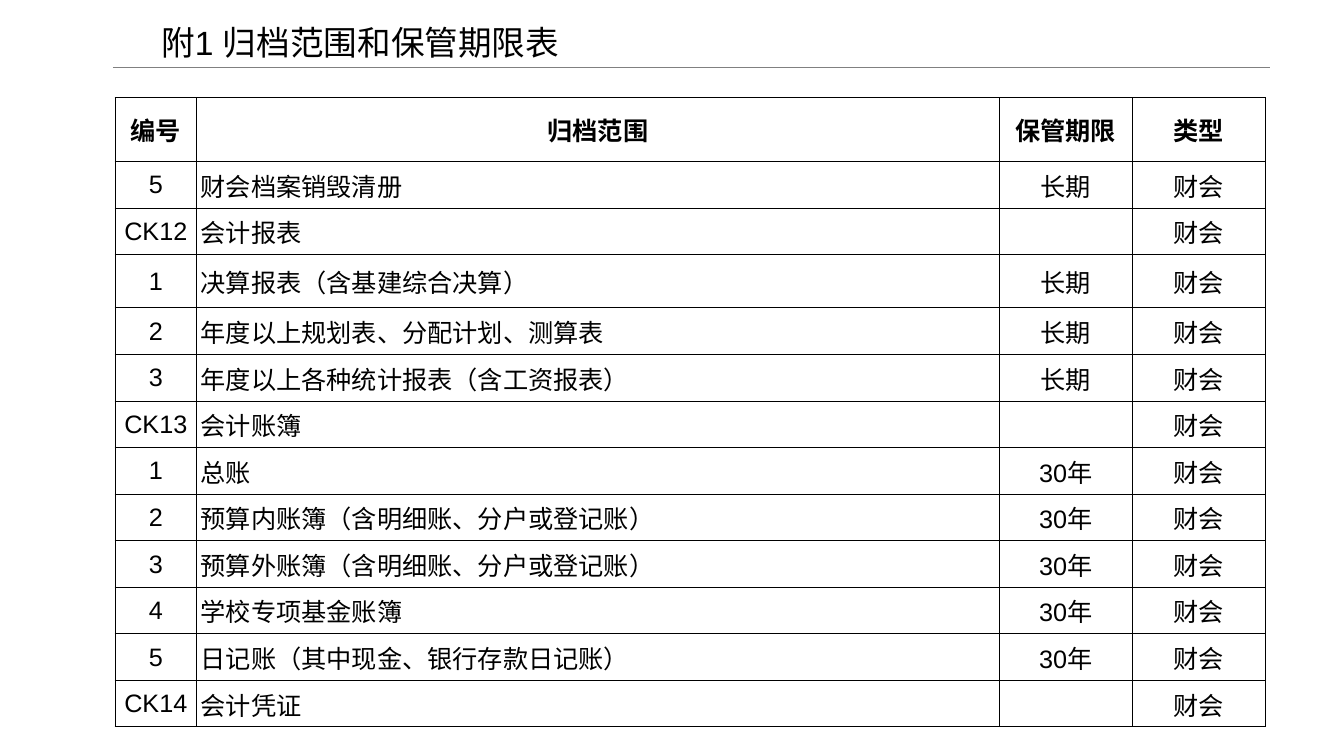
from dataclasses import dataclass

from lxml import etree
from pptx import Presentation
from pptx.dml.color import RGBColor
from pptx.enum import shapes, text
from pptx.oxml import ns
from pptx.util import Inches, Pt

COLORS = {"text": "000000", "border": "000000", "rule": "808080"}
FONT = "Arial"
HEADERS = ("编号", "归档范围", "保管期限", "类型")
CATEGORY = "财会"
COLUMN_WIDTHS = (0.81, 7.96, 1.32, 1.32)
TABLE_HEIGHT = 6.24
HEADER_HEIGHT = 0.63
TALL_HEIGHT = 0.53
TALL_ROW = 3
SCOPE_COLUMN = 1


@dataclass(frozen=True)
class Record:
    number: str
    scope: str
    period: str = ""


RECORDS = (
    Record("5", "财会档案销毁清册", "长期"),
    Record("CK12", "会计报表"),
    Record("1", "决算报表（含基建综合决算）", "长期"),
    Record("2", "年度以上规划表、分配计划、测算表", "长期"),
    Record("3", "年度以上各种统计报表（含工资报表）", "长期"),
    Record("CK13", "会计账簿"),
    Record("1", "总账", "30年"),
    Record("2", "预算内账簿（含明细账、分户或登记账）", "30年"),
    Record("3", "预算外账簿（含明细账、分户或登记账）", "30年"),
    Record("4", "学校专项基金账簿", "30年"),
    Record("5", "日记账（其中现金、银行存款日记账）", "30年"),
    Record("CK14", "会计凭证"),
)


def format_font(font, size: float, bold: bool = False) -> None:
    font.name = FONT
    font.size = Pt(size)
    font.bold = bold
    font.color.rgb = RGBColor.from_string(COLORS["text"])


def add_title(slide, title: str) -> None:
    sp = slide.shapes.title
    sp.left, sp.top, sp.width, sp.height = map(Inches, (1.5, 0.14, 11.06, 0.6))
    tf = sp.text_frame
    tf.text = title
    tf.vertical_anchor = text.MSO_ANCHOR.MIDDLE
    p = tf.paragraphs[0]
    p.alignment = text.PP_ALIGN.LEFT
    p.line_spacing = 0.9
    format_font(p.runs[0].font, 24)


def add_rule(slide) -> None:
    y = Inches(0.67)
    line = slide.shapes.add_connector(
        shapes.MSO_CONNECTOR.STRAIGHT, Inches(1.12), y, Inches(12.6), y
    )
    line.line.color.rgb = RGBColor.from_string(COLORS["rule"])
    line.line.width = Pt(0.75)
    etree.SubElement(line._element.spPr, ns.qn("a:effectLst"))


def add_borders(cell) -> None:
    tcPr = cell._tc.get_or_add_tcPr()
    for side in ("lnL", "lnR", "lnT", "lnB"):
        ln = etree.SubElement(tcPr, ns.qn(f"a:{side}"), w=str(Pt(0.5)))
        fill = etree.SubElement(ln, ns.qn("a:solidFill"))
        etree.SubElement(fill, ns.qn("a:srgbClr"), val=COLORS["border"])


def format_cell(cell, content: str, is_header: bool, is_scope: bool) -> None:
    side = 0 if is_header else 0.04 if is_scope else 0.01
    cell.margin_left = cell.margin_right = Inches(side)
    cell.margin_top = Inches(0 if is_header else 0.01)
    cell.margin_bottom = 0
    cell.vertical_anchor = text.MSO_ANCHOR.MIDDLE
    add_borders(cell)
    cell.fill.background()
    cell.text_frame.text = content
    p = cell.text_frame.paragraphs[0]
    left = is_scope and not is_header
    p.alignment = text.PP_ALIGN.LEFT if left else text.PP_ALIGN.CENTER
    for r in p.runs:
        format_font(r.font, 18, is_header)


def add_archive_table(slide) -> None:
    rows = [HEADERS] + [(r.number, r.scope, r.period, CATEGORY) for r in RECORDS]
    table = slide.shapes.add_table(
        len(rows), len(HEADERS), Inches(1.14), Inches(0.97),
        Inches(sum(COLUMN_WIDTHS)), Inches(TABLE_HEIGHT),
    ).table
    table.first_row = table.horz_banding = False
    for column, width in zip(table.columns, COLUMN_WIDTHS):
        column.width = Inches(width)
    special = {0: HEADER_HEIGHT, TALL_ROW: TALL_HEIGHT}
    regular = (TABLE_HEIGHT - sum(special.values())) / (len(rows) - len(special))
    for i, contents in enumerate(rows):
        table.rows[i].height = Inches(special.get(i, regular))
        for j, content in enumerate(contents):
            format_cell(table.cell(i, j), content, i == 0, j == SCOPE_COLUMN)


def main() -> None:
    prs = Presentation()
    prs.slide_width, prs.slide_height = Inches(13.33), Inches(7.5)
    slide = prs.slides.add_slide(prs.slide_layouts.get_by_name("Title Only"))
    add_rule(slide)
    add_title(slide, "附1 归档范围和保管期限表")
    add_archive_table(slide)
    prs.save("out.pptx")


if __name__ == "__main__":
    main()
